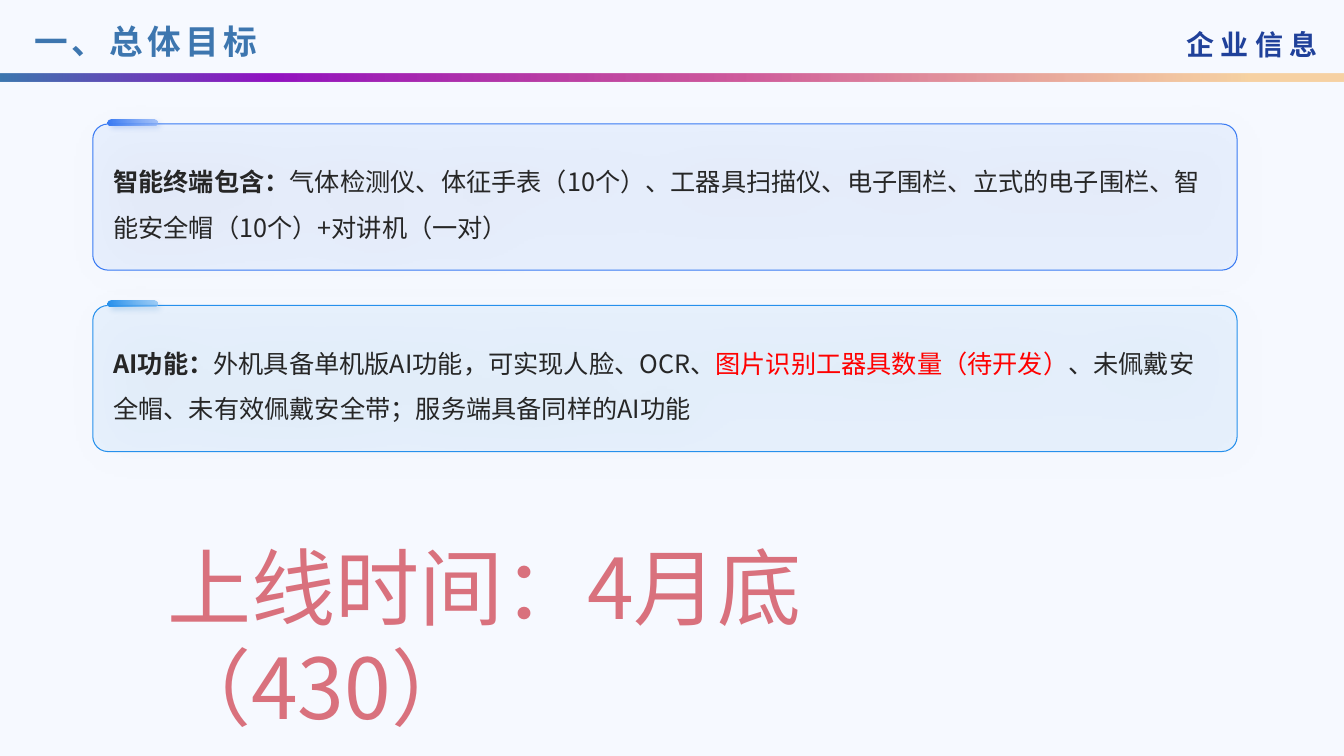
from lxml import etree
from pptx import Presentation
from pptx.dml.color import RGBColor
from pptx.enum import shapes, text
from pptx.oxml.ns import qn
from pptx.util import Inches, Pt

# Content
FONT = "Noto Sans CJK SC"
C = {"bg": "F6F9FF", "brand": "20419A", "title": "3D76AF", "body": "262626",
     "red": "FF0000", "black": "000000"}
BAR = [(0, "3C78AF", 100), (20, "9213C2", 100), (56, "C01B72", 70), (93, "F7AC47", 50)]
DATE = [(0, "D9717D", 100), (100, "E32E37", 100)]
# Each card: line colour, light colour, tab shadow colour, runs (text, bold, colour)
CARDS = [
    ("397AF3", "88AFF8", "0D53D4", [
        ("智能终端包含：", True, "body"),
        ("气体检测仪、体征手表（10个）、工器具扫描仪、电子围栏、立式的电子围栏、"
         "智能安全帽（10个）+对讲机（一对）", False, "body")]),
    ("2690EC", "7DBCF4", "116DBD", [
        ("AI功能：", True, "body"),
        ("外机具备单机版AI功能，可实现人脸、OCR、", False, "body"),
        ("图片识别工器具数量（待开发）", False, "red"),
        ("、未佩戴安全帽、未有效佩戴安全带；服务端具备同样的AI功能", False, "body")]),
]

prs = Presentation()
prs.slide_width, prs.slide_height = Inches(13.33), Inches(7.5)
s = prs.slides.add_slide(prs.slide_layouts[6])
s.background.fill.solid()
s.background.fill.fore_color.rgb = RGBColor.from_string(C["bg"])


def add_color(parent, color, alpha):
    clr = etree.SubElement(parent, qn("a:srgbClr"), val=color)
    if alpha < 100:
        etree.SubElement(clr, qn("a:alpha"), val=str(alpha * 1000))


def gradient(fill, element, stops, angle=0):
    fill.gradient()
    grad = element.find(qn("a:gradFill"))
    stop_list = grad.find(qn("a:gsLst"))
    for old in list(stop_list):
        stop_list.remove(old)
    for pos, color, alpha in stops:
        stop = etree.SubElement(stop_list, qn("a:gs"), pos=str(pos * 1000))
        add_color(stop, color, alpha)
    grad.find(qn("a:lin")).set("ang", str(angle * 60000))


def add_box(kind, x, y, w, h, adj=None):
    sp = s.shapes.add_shape(kind, Inches(x), Inches(y), Inches(w), Inches(h))
    sp.shadow.inherit = False
    sp.line.fill.background()
    if adj is not None:
        sp.adjustments[0] = adj
    return sp


def add_shadow(sp, color, alpha, blur, dist):
    effects = sp._element.spPr.find(qn("a:effectLst"))
    shadow = etree.SubElement(effects, qn("a:outerShdw"), blurRad=str(Pt(blur)),
                              dist=str(Pt(dist)), dir=str(45 * 60000),
                              algn="tl", rotWithShape="0")
    add_color(shadow, color, alpha)


def add_run(p, words, size, color=None, bold=False, font=FONT):
    r = p.add_run()
    r.text = words
    r.font.size, r.font.bold, r.font.name = Pt(size), bold, font
    if color:
        r.font.color.rgb = RGBColor.from_string(C[color])
    etree.SubElement(r.font._element, qn("a:ea"), typeface=FONT)
    return r


def add_text(x, y, w, h, anchor=text.MSO_ANCHOR.MIDDLE, wrap=True):
    tf = s.shapes.add_textbox(Inches(x), Inches(y), Inches(w), Inches(h)).text_frame
    tf.word_wrap, tf.vertical_anchor = wrap, anchor
    return tf


# Header: organisation name, colour bar, title
add_run(add_text(11.67, 0.18, 1.58, 0.51, wrap=False).paragraphs[0],
        "企 业 信 息", 20, "brand", True)
bar = add_box(shapes.MSO_SHAPE.RECTANGLE, 0, 0.73, 13.33, 0.08)
gradient(bar.fill, bar._element.spPr, BAR)
r = add_run(add_text(0.24, 0.02, 11.75, 0.77).paragraphs[0],
            "一、总体目标", 24, "title", True, "Arial")
r.font._element.set("spc", "300")

# Cards, each with a small tab on its top edge
for i, (dark, light, glow, runs) in enumerate(CARDS):
    y = 1.23 + 1.8 * i
    card = add_box(shapes.MSO_SHAPE.ROUNDED_RECTANGLE, 0.92, y, 11.35, 1.45, 0.104)
    card.fill.solid()
    card.fill.fore_color.rgb = RGBColor.from_string(light)
    clr = card._element.spPr.find(qn("a:solidFill")).find(qn("a:srgbClr"))
    etree.SubElement(clr, qn("a:alpha"), val="12000")
    card.line.color.rgb = RGBColor.from_string(dark)
    card.line.width = Pt(0.75)
    add_shadow(card, C["black"], 7, 35, 3)

    tf = card.text_frame
    tf.word_wrap, tf.vertical_anchor = True, text.MSO_ANCHOR.MIDDLE
    tf.margin_left = tf.margin_right = Inches(0.16)
    tf.margin_top = tf.margin_bottom = 0
    p = tf.paragraphs[0]
    p.alignment, p.line_spacing = text.PP_ALIGN.LEFT, 1.5
    for words, bold, color in runs:
        add_run(p, words, 18, color, bold)

    tab = add_box(shapes.MSO_SHAPE.ROUNDED_RECTANGLE, 1.07, y - 0.045, 0.49, 0.06, 0.5)
    gradient(tab.fill, tab._element.spPr, [(0, dark, 100), (100, light, 71)])
    add_shadow(tab, glow, 20, 4, 3)

# Launch date
tf = add_text(1.56, 5.26, 9.25, 1.11, text.MSO_ANCHOR.TOP)
tf.auto_size = text.MSO_AUTO_SIZE.SHAPE_TO_FIT_TEXT
r = add_run(tf.paragraphs[0], "上线时间：4月底（430）", 60)
gradient(r.font.fill, r.font._element, DATE, 90)

prs.save("out.pptx")
